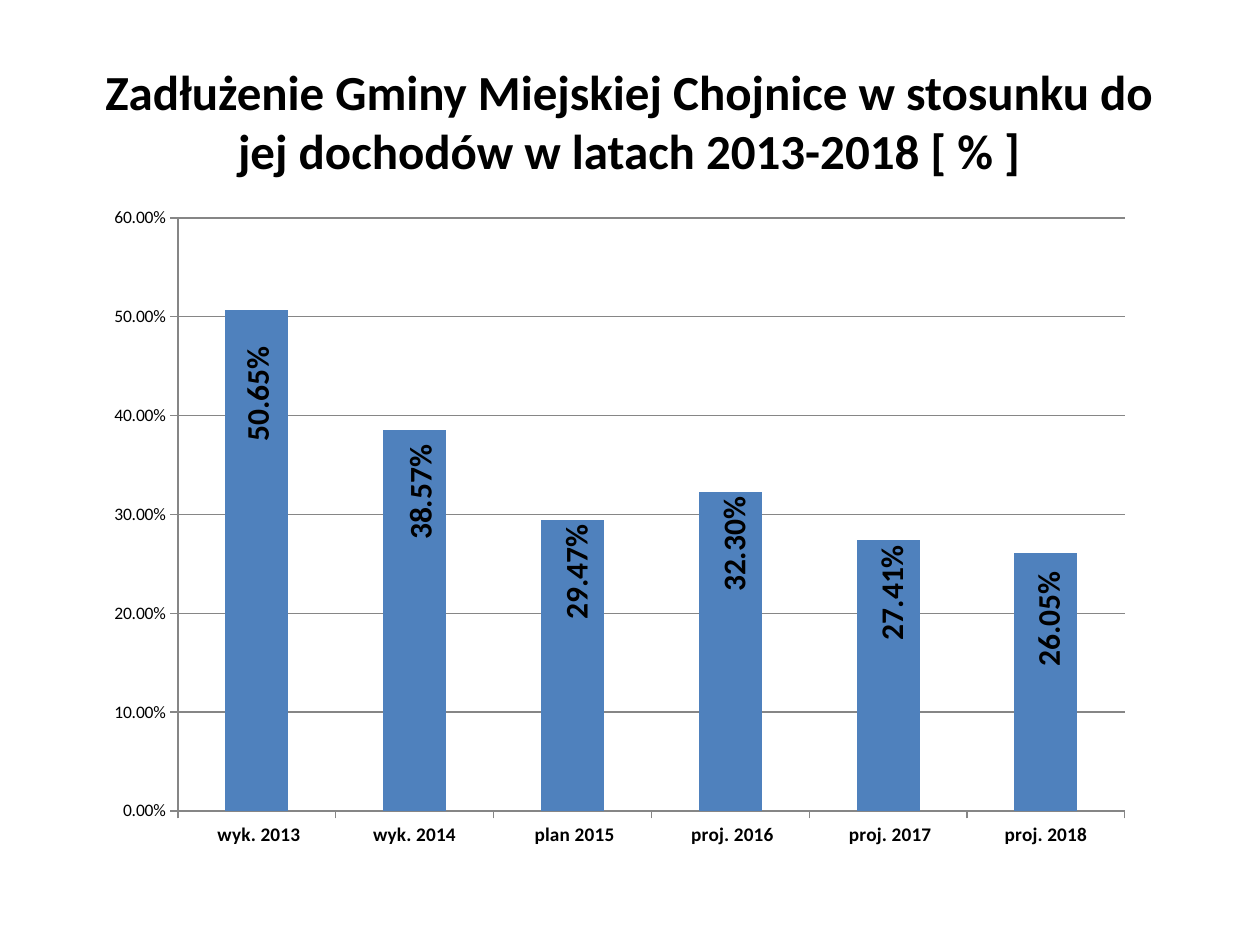
from lxml.etree import SubElement
from pptx import Presentation
from pptx.chart.data import CategoryChartData
from pptx.dml.color import RGBColor
from pptx.enum.chart import XL_CHART_TYPE, XL_LABEL_POSITION, XL_TICK_MARK
from pptx.enum.text import MSO_ANCHOR, MSO_AUTO_SIZE, PP_ALIGN
from pptx.oxml.ns import qn
from pptx.util import Pt

SCALE = 914400 / 126
C15 = "http://schemas.microsoft.com/office/drawing/2012/chart"
THEME = {
    "text": RGBColor(0x00, 0x00, 0x00),
    "bars": RGBColor(0x4F, 0x81, 0xBD),
    "lines": RGBColor(0x86, 0x86, 0x86),
    "title": {"name": "Calibri", "size": Pt(28), "bold": True},
    "scale": {"name": "Calibri", "size": Pt(10), "bold": False},
    "years": {"name": "Calibri", "size": Pt(11), "bold": True},
    "shares": {"name": "Calibri", "size": Pt(18), "bold": True},
}


def style(font, role):
    for attribute, value in THEME[role].items():
        setattr(font, attribute, value)
    font.color.rgb = THEME["text"]


def add_layout(parent, index, values):
    layout = SubElement(parent, qn("c:layout"))
    parent.insert(index, layout)
    manual = SubElement(layout, qn("c:manualLayout"))
    for tag, value in values.items():
        SubElement(manual, qn(f"c:{tag}")).set("val", str(value))


prs = Presentation()
prs.slide_width, prs.slide_height = round(1260 * SCALE), round(945 * SCALE)
slide = prs.slides.add_slide(prs.slide_layouts[5])

heading = slide.shapes.title
heading_box = {"left": 64, "top": 36, "width": 1130, "height": 169}
for side, length in heading_box.items():
    setattr(heading, side, round(length * SCALE))
heading.text = "Zadłużenie Gminy Miejskiej Chojnice w stosunku do jej dochodów w latach 2013-2018 [ % ]"
heading_frame = {"word_wrap": True, "auto_size": MSO_AUTO_SIZE.NONE, "vertical_anchor": MSO_ANCHOR.MIDDLE}
for attribute, value in heading_frame.items():
    setattr(heading.text_frame, attribute, value)
heading.text_frame.paragraphs[0].alignment = PP_ALIGN.CENTER
style(heading.text_frame.paragraphs[0].runs[0].font, "title")

debt_data = CategoryChartData(number_format="0.00%")
debt_data.categories = [" wyk. 2013", "wyk. 2014", " plan 2015", " proj. 2016", " proj. 2017", "proj. 2018"]
debt_data.add_series("Series 1", [0.5065, 0.3857, 0.2947, 0.323, 0.2741, 0.2605])
debt_width, debt_height = 1052, 665
debt_box = [round(length * SCALE) for length in (94, 195, debt_width, debt_height)]
debt = slide.shapes.add_chart(XL_CHART_TYPE.COLUMN_CLUSTERED, *debt_box, debt_data).chart
debt.has_legend = False
debt.has_title = False
style(debt.font, "scale")

plot_area = debt.plots[0]._element.getparent()
for old_layout in plot_area.findall(qn("c:layout")):
    plot_area.remove(old_layout)
add_layout(plot_area, 0, {
    "layoutTarget": "inner", "xMode": "edge", "yMode": "edge",
    "x": 84 / debt_width, "y": 23 / debt_height,
    "w": 947 / debt_width, "h": 593 / debt_height,
})

for axis, role in ((debt.category_axis, "years"), (debt.value_axis, "scale")):
    axis.major_tick_mark = XL_TICK_MARK.OUTSIDE
    axis.minor_tick_mark = XL_TICK_MARK.NONE
    axis.format.line.color.rgb = THEME["lines"]
    axis.format.line.width = Pt(0.75)
    style(axis.tick_labels.font, role)

percent_axis = debt.value_axis
percent_format = {"minimum_scale": 0, "maximum_scale": 0.6, "major_unit": 0.1, "has_major_gridlines": True}
for attribute, value in percent_format.items():
    setattr(percent_axis, attribute, value)
percent_axis.major_gridlines.format.line.color.rgb = THEME["lines"]
percent_axis.major_gridlines.format.line.width = Pt(0.75)
percent_axis.tick_labels.number_format = "0.00%"
percent_axis.tick_labels.number_format_is_linked = False

columns = debt.plots[0]
columns.gap_width = 150
columns.vary_by_categories = False
debt_share = columns.series[0]
debt_share.format.fill.solid()
debt_share.format.fill.fore_color.rgb = THEME["bars"]
debt_share.invert_if_negative = False

shares = debt_share.data_labels
share_format = {
    "show_value": True, "number_format": "0.00%", "number_format_is_linked": False,
    "position": XL_LABEL_POSITION.INSIDE_END,
}
for attribute, value in share_format.items():
    setattr(shares, attribute, value)
style(shares.font, "shares")

label_shifts = [(1, 31), (6, 10), (4, 0), (4, 0), (4, 0), (3, 13)]
for year in range(len(label_shifts)):
    share = debt_share.points[year].data_label
    share.position = XL_LABEL_POSITION.INSIDE_END
    style(share.font, "shares")

for label, (right, down) in zip(debt_share._element.iter(qn("c:dLbl")), label_shifts):
    add_layout(label, 1, {"x": right / debt_width, "y": down / debt_height})

for body in debt_share._element.iter(qn("a:bodyPr")):
    body.set("rot", "-5400000")
    body.set("vert", "horz")

share_labels = debt_share._element.find(qn("c:dLbls"))
for leader in share_labels.findall(qn("c:showLeaderLines")):
    leader.set("val", "0")
extensions = SubElement(share_labels, qn("c:extLst"))
extension = SubElement(extensions, qn("c:ext"), nsmap={"c15": C15})
extension.set("uri", "{CE6537A1-D6FC-4f65-9D91-7224C49458BB}")
SubElement(extension, f"{{{C15}}}showLeaderLines").set("val", "0")

prs.save("out.pptx")
